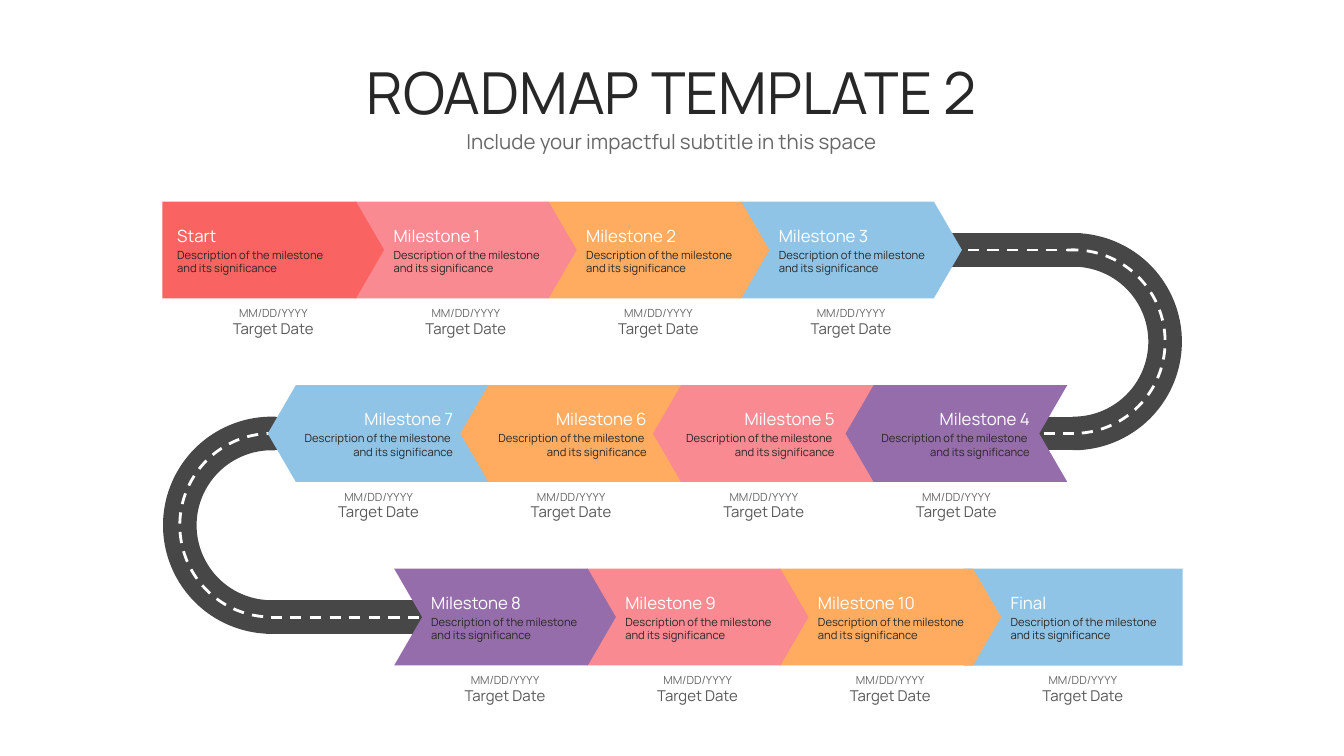
from dataclasses import dataclass

from pptx import Presentation
from pptx import util as u
from pptx.dml.color import RGBColor
from pptx.enum import dml, shapes, text
from pptx.oxml.xmlchemy import OxmlElement


@dataclass(frozen=True)
class Theme:
    font: str = "Manrope"
    ink: str = "272727"
    subtitle: str = "686868"
    target: str = "585858"
    white: str = "FFFFFF"
    asphalt: str = "474747"
    red: str = "F96361"
    pink: str = "F98A91"
    orange: str = "FFAC60"
    blue: str = "90C4E7"
    purple: str = "956DAA"
    title_size: float = 31
    subtitle_size: float = 11
    name_size: float = 9
    target_size: float = 8
    small_size: float = 6


T = Theme()
PLATE_WIDTH, PLATE_HEIGHT, PITCH = 4.19, 1.83, 3.64
FIRST_ROW_TOP, ROW_STEP = 3.81, 3.47
DESCRIPTION_WIDTH = 3.66
PENTAGON, CHEVRON = shapes.MSO_SHAPE.PENTAGON, shapes.MSO_SHAPE.CHEVRON
LEFT, CENTER, RIGHT = text.PP_ALIGN.LEFT, text.PP_ALIGN.CENTER, text.PP_ALIGN.RIGHT


@dataclass(frozen=True)
class Stage:
    name: str
    color: str
    inset: float = 0.73
    outline: shapes.MSO_SHAPE = PENTAGON
    extra_left: float = 0
    extra_width: float = 0
    turned: bool = False


@dataclass(frozen=True)
class Row:
    left: float
    stages: tuple[Stage, ...]  # in order of travel
    leftward: bool = False


@dataclass(frozen=True)
class Lane:
    """One stroke of a road: the upper straight, the bend and the lower straight."""
    color: str
    width: float
    start: float
    end: float
    overlaps: tuple[float, float]
    lengths: tuple[float, float]
    dash: dml.MSO_LINE | None = None


ROWS = (
    Row(3.07, (
        Stage("Start", T.red, 0.28),
        Stage("Milestone 1", T.pink),
        Stage("Milestone 2", T.orange),
        Stage("Milestone 3", T.blue),
    )),
    Row(5.06, (
        Stage("Milestone 4", T.purple, 0.71, CHEVRON),
        Stage("Milestone 5", T.pink, 0.76),
        Stage("Milestone 6", T.orange, 0.67),
        Stage("Milestone 7", T.blue, 0.69),
    ), leftward=True),
    Row(7.45, (
        Stage("Milestone 8", T.purple, 0.7, CHEVRON),
        Stage("Milestone 9", T.pink),
        Stage("Milestone 10", T.orange),
        Stage("Final", T.blue, extra_left=-0.69, extra_width=0.48, turned=True),
    )),
)
LANES = (
    Lane(T.asphalt, 18, 160.5, 54.3, (0.14, 0.1), (4.62, 4.38)),
    Lane(T.white, 1.5, 159.7, 53.6, (0.07, 0.02), (4.57, 4.27), dml.MSO_LINE.DASH),
)


def write(shape, lines: list[str], size: float, color: str, align) -> None:
    frame = shape.text_frame
    frame.margin_left = frame.margin_top = frame.margin_right = frame.margin_bottom = 0
    frame.word_wrap = True
    frame.auto_size = text.MSO_AUTO_SIZE.SHAPE_TO_FIT_TEXT
    frame.vertical_anchor = text.MSO_ANCHOR.TOP
    for number, line in enumerate(lines):
        paragraph = frame.add_paragraph() if number else frame.paragraphs[0]
        paragraph.alignment = align
        run = paragraph.add_run()
        run.text = line
        run.font.name, run.font.size = T.font, u.Pt(size)
        run.font.color.rgb = RGBColor.from_string(color)


def add_label(slide, left: float, top: float, width: float, height: float,
              lines: list[str], size: float, color: str, align=CENTER) -> None:
    label = slide.shapes.add_textbox(u.Cm(left), u.Cm(top), u.Cm(width), u.Cm(height))
    write(label, lines, size, color, align)


def style_stroke(line, lane: Lane) -> None:
    line.color.rgb = RGBColor.from_string(lane.color)
    line.width = u.Pt(lane.width)
    if lane.dash:
        line.dash_style = lane.dash


def add_road(slide, left: float, top: float, mirrored: bool) -> None:
    """Draw a U-turn that joins two rows; a mirrored one bends to the left."""
    outward = -1 if mirrored else 1
    middle = left + ROW_STEP / 2
    for lane in LANES:
        bend = slide.shapes.add_shape(shapes.MSO_SHAPE.ARC, u.Cm(left), u.Cm(top),
                                      u.Cm(ROW_STEP), u.Cm(ROW_STEP))
        bend.adjustments[0], bend.adjustments[1] = lane.start, lane.end
        bend.fill.background()
        bend.shadow.inherit = False
        style_stroke(bend.line, lane)
        if mirrored:
            bend._element.spPr.get_or_add_xfrm().set("flipH", "1")
        for level, (overlap, length) in enumerate(zip(lane.overlaps, lane.lengths)):
            start = middle + outward * overlap
            y = u.Cm(top + level * ROW_STEP)
            straight = slide.shapes.add_connector(
                shapes.MSO_CONNECTOR.STRAIGHT, u.Cm(start), y,
                u.Cm(start - outward * length), y)
            style_stroke(straight.line, lane)
            straight._element.spPr.append(OxmlElement("a:effectLst"))


def add_plate(slide, stage: Stage, left: float, top: float, leftward: bool) -> None:
    plate = slide.shapes.add_shape(
        stage.outline, u.Cm(left + stage.extra_left), u.Cm(top),
        u.Cm(PLATE_WIDTH + stage.extra_width), u.Cm(PLATE_HEIGHT))
    plate.adjustments[0] = 0.29
    plate.rotation = 180 if leftward or stage.turned else 0
    plate.fill.solid()
    plate.fill.fore_color.rgb = RGBColor.from_string(stage.color)
    plate.line.fill.background()
    plate.shadow.inherit = False


def add_stage_text(slide, stage: Stage, left: float, top: float, leftward: bool) -> None:
    align = RIGHT if leftward else LEFT
    text_left = left + stage.inset
    first_line = "Description of the milestone"
    if leftward:
        text_left = left + PLATE_WIDTH - stage.inset - DESCRIPTION_WIDTH
        first_line += " "
    add_label(slide, text_left, top + 0.45, DESCRIPTION_WIDTH, 0.38,
              [stage.name], T.name_size, T.white, align)
    add_label(slide, text_left, top + 0.88, DESCRIPTION_WIDTH, 0.51,
              [first_line, "and its significance"], T.small_size, T.ink, align)
    add_label(slide, left, top + 1.98, PLATE_WIDTH, 0.25,
              ["MM/DD/YYYY"], T.small_size, T.subtitle)
    add_label(slide, left, top + 2.23, PLATE_WIDTH, 0.33,
              ["Target Date"], T.target_size, T.target)


def add_row(slide, row: Row, top: float) -> None:
    """Lay the last stage first, so that each one overlaps the stage after it."""
    last = len(row.stages) - 1
    slots = [(stage, row.left + PITCH * (last - order if row.leftward else order))
             for order, stage in enumerate(row.stages)]
    for stage, left in reversed(slots):
        add_plate(slide, stage, left, top, row.leftward)
    for stage, left in slots:
        add_stage_text(slide, stage, left, top, row.leftward)


def main() -> None:
    deck = Presentation()
    deck.slide_width, deck.slide_height = u.Cm(25.4), u.Cm(14.29)
    slide = deck.slides.add_slide(deck.slide_layouts[5])

    title = slide.shapes.title
    title.left, title.top, title.width, title.height = (
        u.Cm(4.68), u.Cm(1.07), u.Cm(16.03), u.Cm(1.32))
    write(title, ["ROADMAP TEMPLATE 2"], T.title_size, T.ink, CENTER)
    add_label(slide, 7.17, 2.44, 11.05, 0.48,
              ["Include your impactful subtitle in this space"], T.subtitle_size, T.subtitle)

    road_top = FIRST_ROW_TOP + PLATE_HEIGHT / 2
    add_road(slide, 18.55, road_top, mirrored=False)
    add_road(slide, 3.4, road_top + ROW_STEP, mirrored=True)
    for number, row in enumerate(ROWS):
        add_row(slide, row, FIRST_ROW_TOP + number * ROW_STEP)
    deck.save("out.pptx")


if __name__ == "__main__":
    main()
